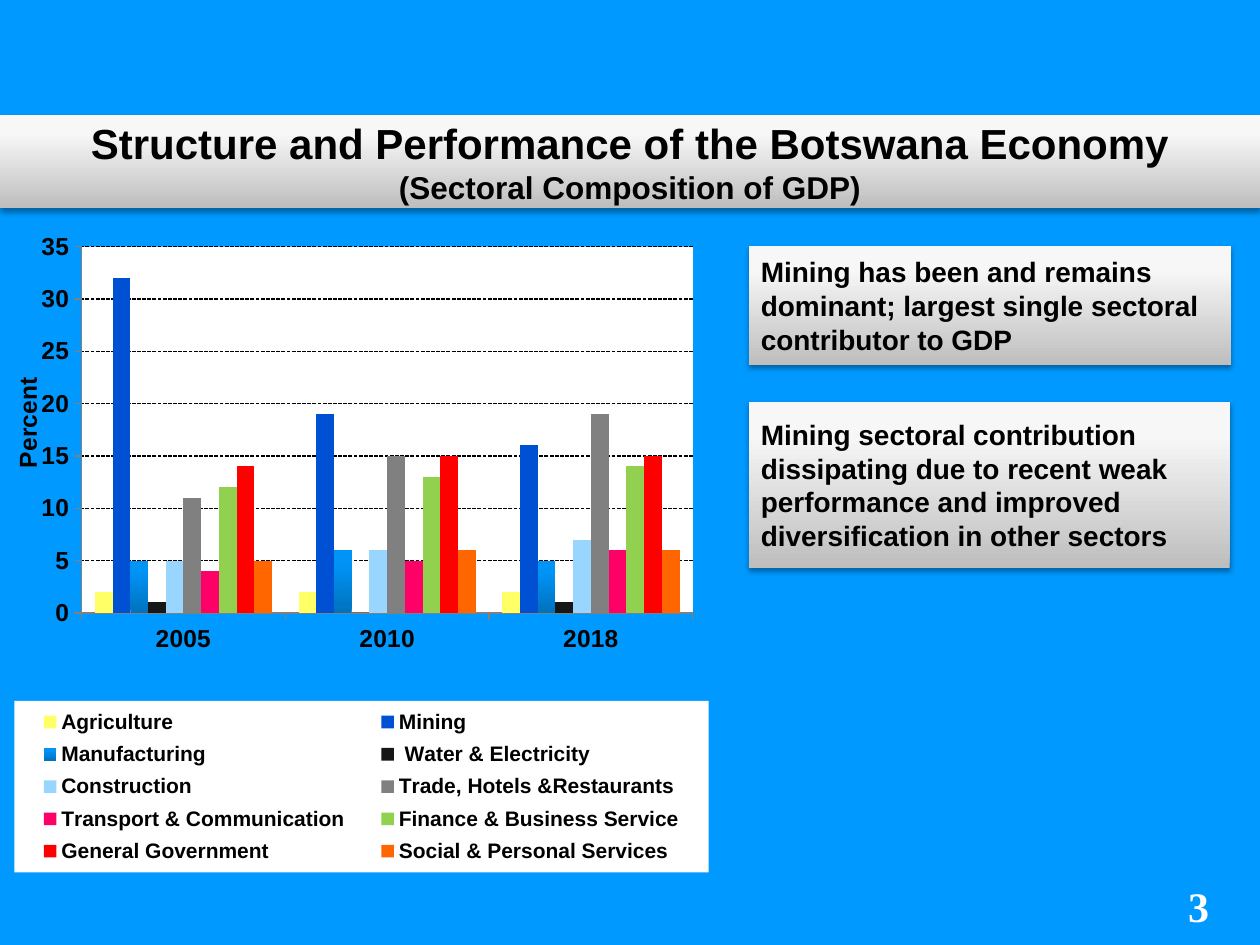
from lxml import etree
from pptx import Presentation
from pptx.chart.data import CategoryChartData
from pptx.dml.color import RGBColor
from pptx.enum.chart import XL_CHART_TYPE, XL_LEGEND_POSITION, XL_TICK_MARK
from pptx.enum.dml import MSO_LINE
from pptx.enum.shapes import MSO_SHAPE
from pptx.enum.text import MSO_ANCHOR, MSO_AUTO_SIZE, PP_ALIGN
from pptx.oxml.ns import qn
from pptx.util import Cm, Pt

COLUMNS = XL_CHART_TYPE.COLUMN_CLUSTERED
BOTTOM = XL_LEGEND_POSITION.BOTTOM
TICK_OUT = XL_TICK_MARK.OUTSIDE
DASH = MSO_LINE.SQUARE_DOT
RECTANGLE = MSO_SHAPE.RECTANGLE
MIDDLE = MSO_ANCHOR.MIDDLE
NO_FIT = MSO_AUTO_SIZE.NONE
LEFT, CENTER = PP_ALIGN.LEFT, PP_ALIGN.CENTER

COLORS = {
    "background": "0099FF", "black": "000000", "white": "FFFFFF", "axis": "808080",
    "agriculture": "FFFF66", "mining": "0050D4", "water": "171717",
    "construction": "99D6FF", "trade": "808080", "transport": "FF0066",
    "finance": "92D050", "government": "FF0000", "social": "FF6600",
}
GRADIENTS = {
    "panel": [(0, "BEBEBE"), (80, "F7F7F7"), (100, "F8F8F8")],
    "manufacturing": [(0, "0072BE"), (80, "0094F7"), (100, "0095F8")],
}
YEARS = ["2005", "2010", "2018"]
SECTORS = [
    ("Agriculture", "agriculture", (2, 2, 2)),
    ("Mining", "mining", (32, 19, 16)),
    ("Manufacturing", "manufacturing", (5, 6, 5)),
    (" Water & Electricity", "water", (1, 0, 1)),
    ("Construction", "construction", (5, 6, 7)),
    ("Trade, Hotels &Restaurants", "trade", (11, 15, 19)),
    ("Transport & Communication", "transport", (4, 5, 6)),
    ("Finance & Business Service", "finance", (12, 13, 14)),
    ("General Government", "government", (14, 15, 15)),
    ("Social & Personal Services", "social", (5, 6, 6)),
]
FINDINGS = [
    ("Mining has been and remains dominant; largest single sectoral contributor to GDP",
     (15.09, 4.95, 9.73, 2.41)),
    ("Mining sectoral contribution dissipating due to recent weak performance "
     "and improved diversification in other sectors", (15.09, 8.1, 9.7, 3.35)),
]


def rgb(name):
    return RGBColor.from_string(COLORS[name])


def add_child(parent, tag, **attributes):
    return etree.SubElement(parent, qn(tag), attributes)


def format_font(font, size, color="black", name="Arial"):
    font.name, font.size, font.bold = name, Pt(size), True
    font.color.rgb = rgb(color)


def add_span(para, text, size, align=LEFT, color="black", name="Arial"):
    para.alignment = align
    span = para.add_run()
    span.text = text
    format_font(span.font, size, color, name)


def fill_gradient(fill, properties, stops):
    """Fill from bottom to top with (percent, colour) stops."""
    fill.gradient()
    fill.gradient_angle = 90
    stop_list = properties.find(".//" + qn("a:gsLst"))
    for old_stop in list(stop_list):
        stop_list.remove(old_stop)
    for percent, color in stops:
        stop = add_child(stop_list, "a:gs", pos=str(percent * 1000))
        add_child(stop, "a:srgbClr", val=color)


def format_panel(shape, box):
    """Place a shape and give it the grey sheen, soft shadow and centred anchor."""
    shape.left, shape.top, shape.width, shape.height = map(Cm, box)
    properties = shape._element.spPr
    fill_gradient(shape.fill, properties, GRADIENTS["panel"])
    shape.line.fill.background()
    shape.shadow.inherit = False
    shadow = add_child(properties.find(qn("a:effectLst")), "a:outerShdw",
                       blurRad=str(Pt(3.1)), dist=str(Pt(1.8)), dir="5400000", rotWithShape="0")
    color = add_child(shadow, "a:srgbClr", val=COLORS["black"])
    add_child(color, "a:alpha", val="35000")
    frame = shape.text_frame
    frame.word_wrap, frame.auto_size, frame.vertical_anchor = True, NO_FIT, MIDDLE
    return frame


def add_title(page, box):
    frame = format_panel(page.shapes.title, box)
    add_span(frame.paragraphs[0], "Structure and Performance of the Botswana Economy", 24, CENTER)
    para = frame.add_paragraph()
    para.space_before = Pt(0)
    add_span(para, "(Sectoral Composition of GDP)", 18, CENTER)


def add_finding(page, text, box):
    frame = format_panel(page.shapes.add_shape(RECTANGLE, *map(Cm, box)), box)
    add_span(frame.paragraphs[0], text, 16)


def set_layout(element, after, x, y, width=None, height=None, target=None):
    """Fix a chart part's place, in fractions of the chart area."""
    for old_layout in element.findall(qn("c:layout")):
        element.remove(old_layout)
    layout = etree.Element(qn("c:layout"))
    manual = add_child(layout, "c:manualLayout")
    if target:
        add_child(manual, "c:layoutTarget", val=target)
    add_child(manual, "c:xMode", val="edge")
    add_child(manual, "c:yMode", val="edge")
    for tag, value in (("x", x), ("y", y), ("w", width), ("h", height)):
        if value is not None:
            add_child(manual, "c:" + tag, val=str(value))
    if after:
        element.find(qn(after)).addnext(layout)
    else:
        element.insert(0, layout)


def set_area_fill(element, before, color=None):
    properties = etree.Element(qn("c:spPr"))
    if color:
        add_child(add_child(properties, "a:solidFill"), "a:srgbClr", val=COLORS[color])
    else:
        add_child(properties, "a:noFill")
    add_child(add_child(properties, "a:ln"), "a:noFill")
    follower = element.find(qn(before)) if before else None
    if follower is None:
        element.append(properties)
    else:
        follower.addprevious(properties)


def format_axis(axis):
    axis.major_tick_mark = TICK_OUT
    format_font(axis.tick_labels.font, 14)
    axis.format.line.color.rgb = rgb("axis")
    axis.format.line.width = Pt(0.75)


def add_sector_chart(page, box):
    data = CategoryChartData(number_format="0")
    data.categories = YEARS
    for name, _, values in SECTORS:
        data.add_series(name, values)
    chart = page.shapes.add_chart(COLUMNS, *map(Cm, box), data).chart
    chart.has_title = False
    chart.font.name, chart.font.size = "Arial", Pt(10)
    chart.font.color.rgb = rgb("white")

    plot = chart.plots[0]
    plot.vary_by_categories, plot.gap_width, plot.overlap = False, 150, 0
    for series, (_, color, _) in zip(plot.series, SECTORS):
        fill = series.format.fill
        if color in GRADIENTS:
            fill_gradient(fill, series._element.find(qn("c:spPr")), GRADIENTS[color])
        else:
            fill.solid()
            fill.fore_color.rgb = rgb(color)

    format_axis(chart.category_axis)
    value_axis = chart.value_axis
    format_axis(value_axis)
    value_axis.minimum_scale, value_axis.maximum_scale, value_axis.major_unit = 0, 35, 5
    grid = value_axis.major_gridlines.format.line
    grid.color.rgb, grid.width, grid.dash_style = rgb("black"), Pt(0.75), DASH
    add_span(value_axis.axis_title.text_frame.paragraphs[0], "Percent", 14, CENTER)
    set_layout(value_axis.axis_title._element, "c:tx", 0.01, 0.29)

    chart.has_legend = True
    legend = chart.legend
    legend.position, legend.include_in_layout = BOTTOM, False
    format_font(legend.font, 12)
    set_layout(legend._element, "c:legendPos", 0.02, 0.75, 0.97, 0.24)
    set_area_fill(legend._element, "c:txPr", "white")

    space = chart._chartSpace
    plot_area = space.find(".//" + qn("c:plotArea"))
    set_layout(plot_area, None, 0.114, 0.114, 0.854, 0.513, "inner")
    set_area_fill(plot_area, None, "white")
    set_area_fill(space, "c:txPr")


def add_page_number(page, box):
    frame = page.shapes.add_textbox(*map(Cm, box)).text_frame
    frame.word_wrap = True
    add_span(frame.paragraphs[0], "3", 24, color="white", name="Times New Roman")


def main():
    deck = Presentation()
    deck.slide_width, deck.slide_height = Cm(25.4), Cm(19.05)
    page = deck.slides.add_slide(deck.slide_layouts[5])
    page.background.fill.solid()
    page.background.fill.fore_color.rgb = rgb("background")
    add_page_number(page, (23.7, 17.63, 1.7, 1.27))
    for text, box in FINDINGS:
        add_finding(page, text, box)
    add_title(page, (0, 2.31, 25.4, 1.88))
    add_sector_chart(page, (0, 3.33, 14.43, 14.4))
    deck.save("out.pptx")


if __name__ == "__main__":
    main()
